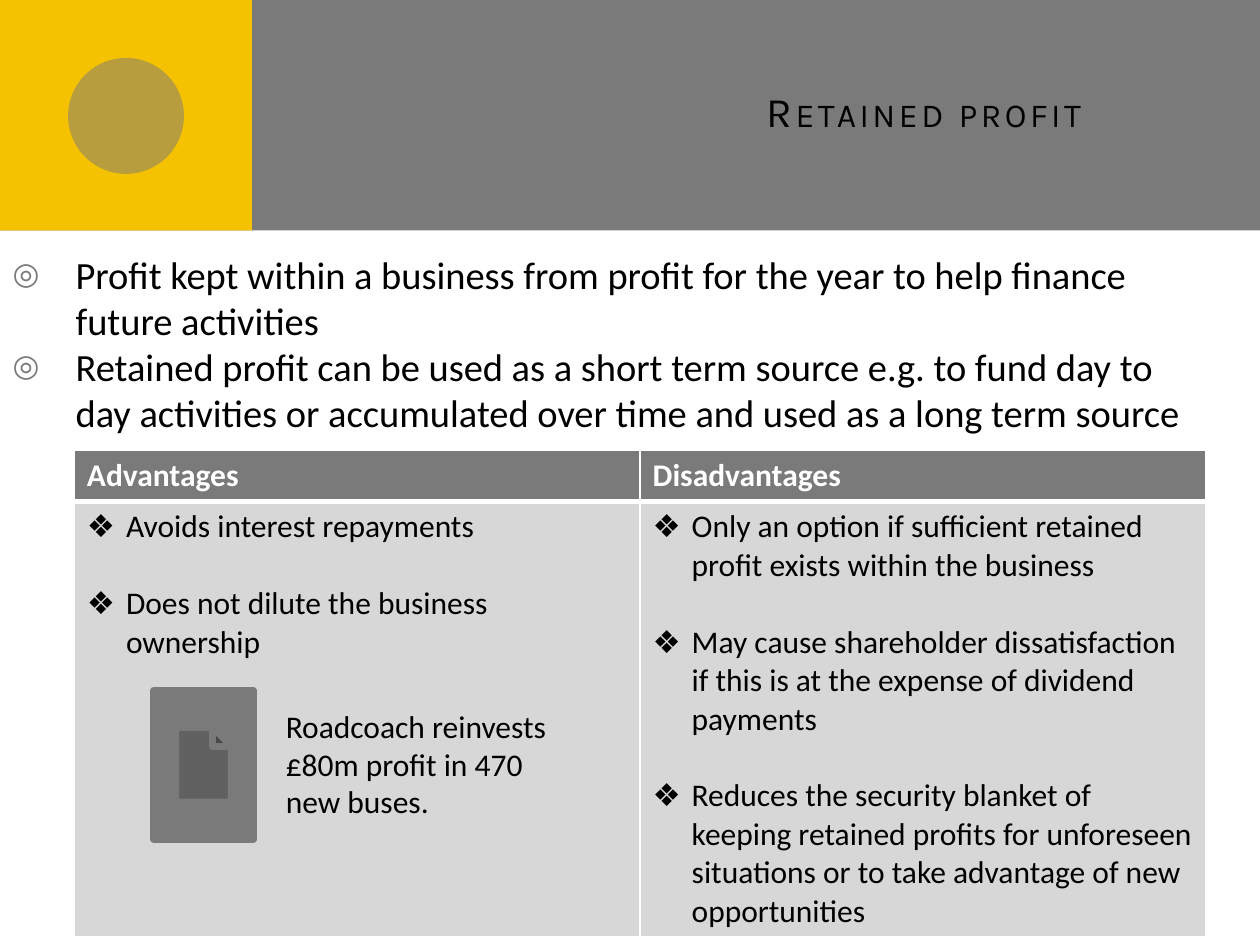
"""Build the retained profit slide with its table of pros and cons."""
from lxml import etree
from pptx import Presentation
from pptx.dml.color import RGBColor
from pptx.enum.shapes import MSO_SHAPE
from pptx.enum.text import MSO_ANCHOR, MSO_AUTO_SIZE, PP_ALIGN
from pptx.oxml.ns import qn
from pptx.util import Inches, Pt

RECT, OVAL, ICON = MSO_SHAPE.RECTANGLE, MSO_SHAPE.OVAL, MSO_SHAPE.ACTION_BUTTON_DOCUMENT
MIDDLE, RIGHT, FIXED = MSO_ANCHOR.MIDDLE, PP_ALIGN.RIGHT, MSO_AUTO_SIZE.NONE
GREY = RGBColor(0x7A, 0x7A, 0x7A)
GOLD = RGBColor(0xF5, 0xC2, 0x01)
PALE = RGBColor(0xD7, 0xD7, 0xD7)
BLACK = RGBColor(0, 0, 0)
WHITE = RGBColor(255, 255, 255)


def write(para, text, size, color=BLACK, face="Calibri", bold=False):
    run = para.add_run()
    run.text = text
    font = run.font
    font.size, font.name, font.bold = Pt(size), face, bold
    font.color.rgb = color
    return run


def bullet(para, char, indent, color=BLACK, scale=100):
    props = para._p.get_or_add_pPr()
    props.set("marL", str(Inches(indent)))
    props.set("indent", str(-Inches(indent)))
    tint = etree.SubElement(props, qn("a:buClr"))
    etree.SubElement(tint, qn("a:srgbClr"), val=str(color))
    etree.SubElement(props, qn("a:buSzPct"), val=str(scale * 1000))
    etree.SubElement(props, qn("a:buFont"), typeface="Calibri")
    etree.SubElement(props, qn("a:buChar"), char=char)


deck = Presentation()
deck.slide_width, deck.slide_height = Inches(10), Inches(7.5)
slide = deck.slides.add_slide(deck.slide_layouts[1])
shapes = slide.shapes
title, body = shapes.title, slide.placeholders[1]

for kind, left, top, width, height, color in (
    (RECT, 0, 0, 10, 1.83, GREY),
    (RECT, 0, 0, 2, 1.83, GOLD),
    (OVAL, 0.54, 0.46, 0.92, 0.92, GREY),
):
    part = shapes.add_shape(kind, Inches(left), Inches(top), Inches(width), Inches(height))
    part.shadow.inherit = False
    part.fill.solid()
    part.fill.fore_color.rgb = color
    part.line.fill.background()
shade = part._element.spPr.find(qn("a:solidFill"))[0]
etree.SubElement(shade, qn("a:alpha"), val="50000")

for holder, left, top, width, height in (
    (title, 2.67, 0.25, 6.83, 1.25),
    (body, 0, 1.94, 9.65, 4.2),
):
    holder.left, holder.top = Inches(left), Inches(top)
    holder.width, holder.height = Inches(width), Inches(height)
    holder.text_frame.auto_size = FIXED
    shapes._spTree.append(holder._element)

frame = title.text_frame
frame.vertical_anchor = MIDDLE
frame.margin_right = Inches(0.5)
para = frame.paragraphs[0]
para.alignment = RIGHT
style = write(para, "Retained profit", 24, face="Karla")._r.get_or_add_rPr()
style.set("spc", "200")
style.set("cap", "small")

points = (
    "Profit kept within a business from profit for the year to help finance future activities",
    "Retained profit can be used as a short term source e.g. to fund day to day activities "
    "or accumulated over time and used as a long term source",
)
frame = body.text_frame
for i, point in enumerate(points):
    para = frame.add_paragraph() if i else frame.paragraphs[0]
    para.space_before = Pt(0)
    bullet(para, "◎", 0.5, GREY, 80)
    write(para, point, 22)

columns = (
    ("Advantages", (
        "Avoids interest repayments",
        "Does not dilute the business ownership",
    )),
    ("Disadvantages", (
        "Only an option if sufficient retained profit exists within the business",
        "May cause shareholder dissatisfaction if this is at the expense of dividend payments",
        "Reduces the security blanket of keeping retained profits for unforeseen "
        "situations or to take advantage of new opportunities",
    )),
)
table = shapes.add_table(2, 2, Inches(0.59), Inches(3.57), Inches(8.98), Inches(3.81)).table
table.horz_banding = False
table.rows[0].height, table.rows[1].height = Inches(0.41), Inches(3.4)
for col, (head, items) in enumerate(columns):
    table.columns[col].width = Inches(4.49)
    write(table.cell(0, col).text_frame.paragraphs[0], head, 18, WHITE, bold=True)
    frame = table.cell(1, col).text_frame
    for i, item in enumerate(items):
        para = frame.add_paragraph() if i else frame.paragraphs[0]
        para.space_before = Pt(22 if i else 0)
        bullet(para, "❖", 0.31)
        write(para, item, 18)
    for row, color, thick in ((0, GREY, "lnB"), (1, PALE, "lnT")):
        cell = table.cell(row, col)
        props = cell._tc.get_or_add_tcPr()
        for side in ("lnL", "lnR", "lnT", "lnB"):
            edge = etree.SubElement(props, qn("a:" + side), w=str(Pt(3 if side == thick else 1)))
            paint = etree.SubElement(edge, qn("a:solidFill"))
            etree.SubElement(paint, qn("a:srgbClr"), val=str(WHITE))
        cell.fill.solid()
        cell.fill.fore_color.rgb = color

icon = shapes.add_shape(ICON, Inches(1.22), Inches(5.48), Inches(0.79), Inches(1.18))
icon.shadow.inherit = False
icon.fill.solid()
icon.fill.fore_color.rgb = GREY
icon.line.color.rgb = GREY
icon.line.width = Pt(4)

note = shapes.add_textbox(Inches(2.17), Inches(5.56), Inches(2.44), Inches(1.01))
note.text_frame.word_wrap = True
write(note.text_frame.paragraphs[0], "Roadcoach reinvests £80m profit in 470 new buses.", 18)

deck.save("out.pptx")
